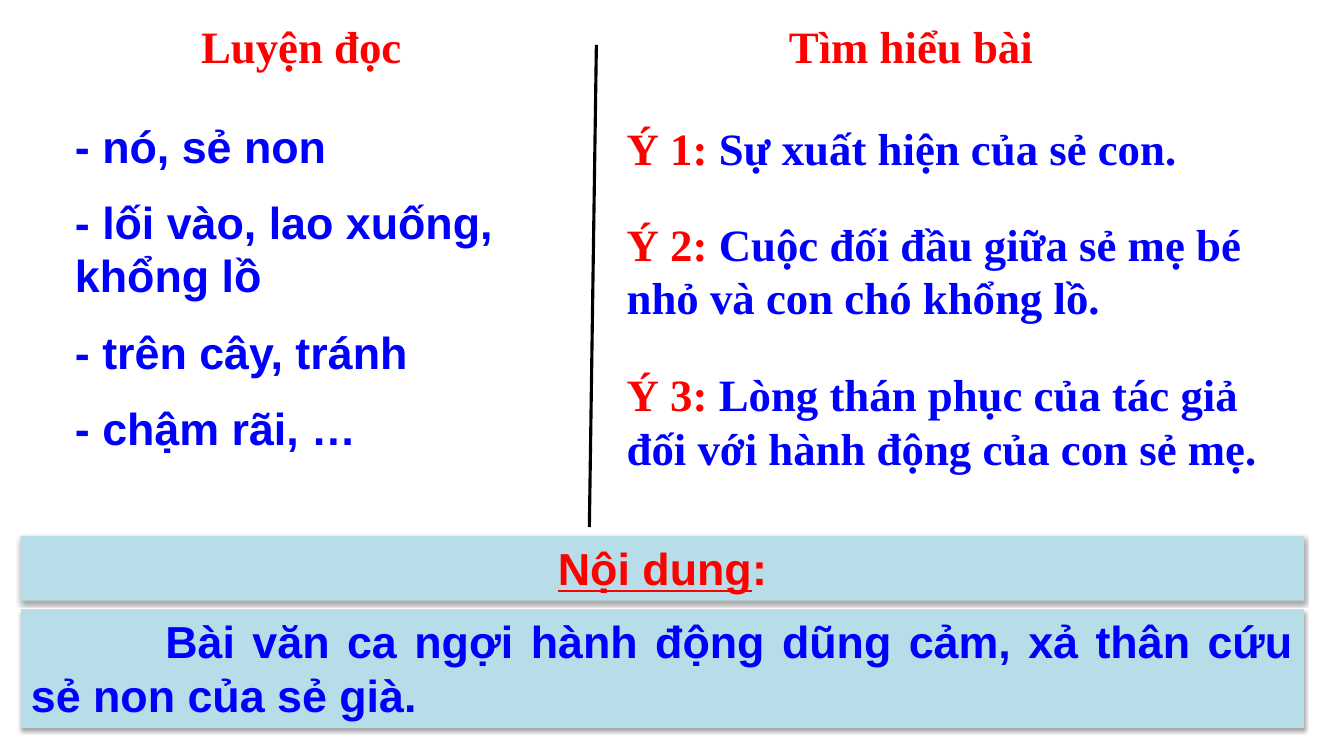
from lxml import etree
from pptx import Presentation
from pptx.dml.color import RGBColor
from pptx.enum.shapes import MSO_CONNECTOR, MSO_SHAPE
from pptx.enum.text import MSO_ANCHOR, PP_ALIGN
from pptx.oxml import parse_xml
from pptx.oxml.ns import qn
from pptx.util import Pt

LINE, RECT = MSO_CONNECTOR.STRAIGHT, MSO_SHAPE.RECTANGLE
TOP = MSO_ANCHOR.TOP
LEFT, CENTER, JUSTIFY = PP_ALIGN.LEFT, PP_ALIGN.CENTER, PP_ALIGN.JUSTIFY
SERIF, SANS = "Times New Roman", "Arial"
RED, BLUE, PALE, BLACK = "FF0000", "0000FF", "B7DEE8", "000000"

SHADOW = """<a:effectLst
 xmlns:a="http://schemas.openxmlformats.org/drawingml/2006/main">
<a:outerShdw blurRad="39370" dist="22860" dir="5400000" rotWithShape="0">
<a:srgbClr val="000000"><a:alpha val="35000"/></a:srgbClr>
</a:outerShdw></a:effectLst>"""

WORDS = [
    "- nó, sẻ non",
    "- lối vào, lao xuống, khổng lồ",
    "- trên cây, tránh",
    "- chậm rãi, …",
]
IDEAS = [
    (83, 46, "Sự xuất hiện của sẻ con."),
    (151, 85, "Cuộc đối đầu giữa sẻ mẹ bé nhỏ và con chó khổng lồ."),
    (258.5, 85, "Lòng thán phục của tác giả đối với hành động của con sẻ mẹ."),
]


def color(code):
    return RGBColor.from_string(code)


def write(frame, paras, font, align=LEFT, gap=0):
    """Fill a frame; each paragraph is a list of (text, colour) runs."""
    frame.word_wrap = True
    frame.vertical_anchor = TOP
    for i, runs in enumerate(paras):
        para = frame.add_paragraph() if i else frame.paragraphs[0]
        para.alignment = align
        para.space_before = Pt(gap if i else 0)
        para.font.name = font
        para.font.size = Pt(32)
        para.font.bold = True
        for text, code in runs:
            run = para.add_run()
            run.text = text
            run.font.color.rgb = color(code)


def label(slide, box, paras, font, gap=0):
    shape = slide.shapes.add_textbox(*map(Pt, box))
    write(shape.text_frame, paras, font, gap=gap)
    return shape.text_frame


def band(slide, top, height, runs, align):
    shape = slide.shapes.add_shape(RECT, Pt(15), Pt(top), Pt(916.5), Pt(height))
    shape.fill.solid()
    shape.fill.fore_color.rgb = color(PALE)
    shape.line.fill.background()
    shape._element.spPr.append(parse_xml(SHADOW))
    write(shape.text_frame, [runs], SANS, align)
    return shape.text_frame.paragraphs[0]


def divide(slide, start, end):
    line = slide.shapes.add_connector(LINE, *map(Pt, start + end))
    line.line.color.rgb = color(BLACK)
    line.line.width = Pt(2.25)
    etree.SubElement(line._element.spPr, qn("a:effectLst"))


def main():
    deck = Presentation()
    deck.slide_width, deck.slide_height = Pt(960), Pt(540)
    slide = deck.slides.add_slide(deck.slide_layouts[6])

    # Column headings and divider
    divide(slide, (426, 32), (421, 376.5))
    label(slide, (136.5, 9.5, 281, 46), [[("Luyện đọc", RED)]], SERIF)
    label(slide, (556.5, 9.5, 258, 46), [[("Tìm hiểu bài", RED)]], SERIF)

    # Words to practise
    frame = label(slide, (44.5, 80, 361.5, 260.5),
                  [[(word, BLUE)] for word in WORDS], SANS, gap=16)
    frame.margin_left = frame.margin_right = Pt(9)
    frame.margin_top = frame.margin_bottom = Pt(4.5)

    # Main ideas
    for num, (top, height, idea) in enumerate(IDEAS, 1):
        runs = [(f"Ý {num}: ", RED), (idea, BLUE)]
        label(slide, (440.5, top, 491, height), [runs], SERIF)

    # Summary bands
    para = band(slide, 435, 85, [(
        "Bài văn ca ngợi hành động dũng cảm, xả thân cứu sẻ non của sẻ già.",
        BLUE)], JUSTIFY)
    para._p.get_or_add_pPr().set("indent", str(Pt(96)))
    para = band(slide, 383, 46, [("Nội dung", RED), (":", RED)], CENTER)
    para.runs[0].font.underline = True

    deck.save("out.pptx")


if __name__ == "__main__":
    main()
